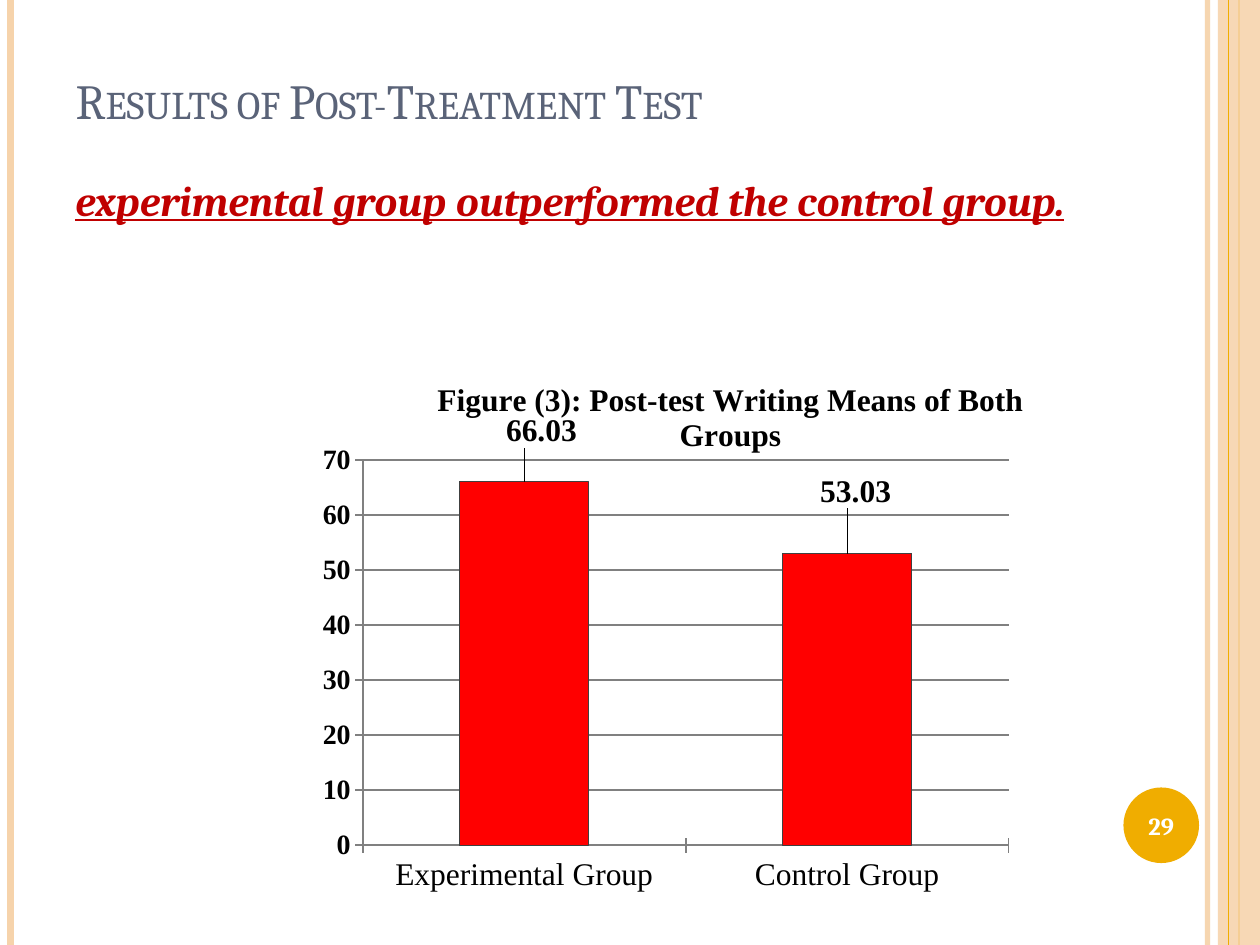
from lxml import etree
from pptx import Presentation
from pptx.chart.data import CategoryChartData
from pptx.dml.color import RGBColor
from pptx.enum.chart import XL_CHART_TYPE, XL_LABEL_POSITION, XL_TICK_MARK
from pptx.enum.shapes import MSO_CONNECTOR, MSO_SHAPE
from pptx.enum.text import MSO_ANCHOR, PP_ALIGN
from pptx.oxml.ns import qn
from pptx.util import Pt

COLUMN = XL_CHART_TYPE.COLUMN_CLUSTERED
OUTSIDE_END = XL_LABEL_POSITION.OUTSIDE_END
CROSS = XL_TICK_MARK.CROSS
STRAIGHT = MSO_CONNECTOR.STRAIGHT
RECT, OVAL = MSO_SHAPE.RECTANGLE, MSO_SHAPE.OVAL
MIDDLE, BOTTOM = MSO_ANCHOR.MIDDLE, MSO_ANCHOR.BOTTOM
LEFT, CENTER = PP_ALIGN.LEFT, PP_ALIGN.CENTER

W, H = 720, 540
COLORS = {"peach": "F6D3AB", "gold": "F0AD00", "slate": "5A6378",
          "crimson": "C00000", "red": "FF0000", "edge": "404040",
          "grid": "808080", "black": "000000", "white": "FFFFFF"}
SERIF, CHART_FONT = "Cambria", "Times New Roman"


def rgb(name):
    return RGBColor.from_string(COLORS[name])


def format_font(font, color="black", **values):
    for key, value in values.items():
        setattr(font, key, value)
    font.color.rgb = rgb(color)


def set_alpha(fill_parent, percent):
    clr = next(fill_parent.iter(qn("a:srgbClr")))
    etree.SubElement(clr, qn("a:alpha"), val=str(percent * 1000))


def add_stripe(s, x, width, color, alpha=100):
    """Full-height vertical line."""
    line = s.shapes.add_connector(STRAIGHT, Pt(x), 0, Pt(x), Pt(H))
    line.line.width = Pt(width)
    line.line.color.rgb = rgb(color)
    sp_pr = line._element.spPr
    if alpha < 100:
        set_alpha(sp_pr, alpha)
    etree.SubElement(sp_pr, qn("a:effectLst"))


def add_plain_shape(s, kind, x, y, w, h, color):
    sp = s.shapes.add_shape(kind, Pt(x), Pt(y), Pt(w), Pt(h))
    sp.shadow.inherit = False
    sp.fill.solid()
    sp.fill.fore_color.rgb = rgb(color)
    sp.line.fill.background()
    return sp


def write_text(sp, text, align, anchor, **values):
    tf = sp.text_frame
    tf.word_wrap = True
    tf.vertical_anchor = anchor
    p = tf.paragraphs[0]
    p.alignment = align
    r = p.add_run()
    r.text = text
    format_font(r.font, name=SERIF, **values)
    return r


def add_frame(s):
    add_stripe(s, 690, 3, "peach", 93)
    add_stripe(s, 6, 4.5, "peach")
    add_stripe(s, 708, 1.5, "gold")
    band = add_plain_shape(s, RECT, 696, 0, 24, H, "peach")
    set_alpha(band._element.spPr, 87)
    add_stripe(s, 702, 0.75, "gold")


def add_page_number(s, number):
    badge = add_plain_shape(s, OVAL, 642, 450, 43.2, 43.2, "gold")
    tf = badge.text_frame
    tf.margin_left = tf.margin_right = tf.margin_top = tf.margin_bottom = 0
    write_text(badge, number, CENTER, MIDDLE, size=Pt(14), bold=True, color="white")


def add_title(s, text):
    title = s.shapes.title
    title.left, title.top, title.width, title.height = Pt(36), Pt(21.6), Pt(588), Pt(56)
    r = write_text(title, text, LEFT, BOTTOM, size=Pt(28), color="slate")
    r.font._element.set("cap", "small")


def add_finding(s, text):
    box = s.shapes.add_textbox(Pt(36), Pt(96), Pt(660), Pt(36))
    write_text(box, text, LEFT, MSO_ANCHOR.TOP, size=Pt(24), bold=True,
               italic=True, underline=True, color="crimson")


def set_layout(parent, index, **values):
    """Give a chart part a manual layout, adding c:layout at index if absent."""
    layout = parent.find(qn("c:layout"))
    if layout is None:
        layout = etree.Element(qn("c:layout"))
        parent.insert(index, layout)
    manual = etree.SubElement(layout, qn("c:manualLayout"))
    for tag, value in values.items():
        etree.SubElement(manual, qn(f"c:{tag}"), val=str(value))


def format_axis(axis, **values):
    axis.major_tick_mark = CROSS
    axis.format.line.color.rgb = rgb("grid")
    axis.format.line.width = Pt(1)
    format_font(axis.tick_labels.font, name=CHART_FONT, **values)


def add_chart_title(chart, text):
    title = chart.chart_title
    r = title.text_frame.paragraphs[0].add_run()
    r.text = text
    format_font(r.font, name=CHART_FONT, size=Pt(18), bold=True)
    set_layout(title._element, 1, xMode="edge", yMode="edge", x=0.16, y=0.05)
    title._element.find(qn("c:overlay")).set("val", "1")


def add_means_chart(s):
    data = CategoryChartData()
    data.categories = ["Experimental Group", "Control Group"]
    data.add_series("Series 1", (66.03, 53.03))
    chart = s.shapes.add_chart(COLUMN, Pt(168), Pt(198), Pt(492), Pt(324), data).chart
    chart.has_legend = False
    format_font(chart.font, name=CHART_FONT, size=Pt(10))
    add_chart_title(chart, "Figure (3): Post-test Writing Means of Both Groups")

    format_axis(chart.category_axis, size=Pt(18), bold=False)
    value_axis = chart.value_axis
    format_axis(value_axis, size=Pt(16), bold=True)
    value_axis.minimum_scale, value_axis.maximum_scale, value_axis.major_unit = 0, 70, 10
    grid = value_axis.major_gridlines.format.line
    grid.color.rgb, grid.width = rgb("grid"), Pt(1)

    plot = chart.plots[0]
    plot.gap_width, plot.vary_by_categories = 150, False
    set_layout(plot._element.getparent(), 0, layoutTarget="inner", xMode="edge",
               yMode="edge", x=0.08, y=0.2, w=0.75, h=0.68)

    series = plot.series[0]
    series.format.fill.solid()
    series.format.fill.fore_color.rgb = rgb("red")
    series.format.line.color.rgb = rgb("edge")
    series.format.line.width = Pt(0.75)
    label_font = {"name": CHART_FONT, "size": Pt(18), "bold": True}
    series.data_labels.show_value = True
    format_font(series.data_labels.font, **label_font)
    for i, (dx, dy) in enumerate([(0.02, -0.05), (0.01, -0.07)]):
        label = series.points[i].data_label
        label.position = OUTSIDE_END
        format_font(label.font, **label_font)
        d_lbl = series.data_labels._element.findall(qn("c:dLbl"))[i]
        set_layout(d_lbl, 1, x=dx, y=dy)


def main():
    prs = Presentation()
    prs.slide_width, prs.slide_height = Pt(W), Pt(H)
    s = prs.slides.add_slide(prs.slide_layouts[5])
    add_frame(s)
    add_title(s, "Results of Post-Treatment Test")
    add_page_number(s, "29")
    add_means_chart(s)
    add_finding(s, "experimental group outperformed the control group.")
    prs.save("out.pptx")


if __name__ == "__main__":
    main()
